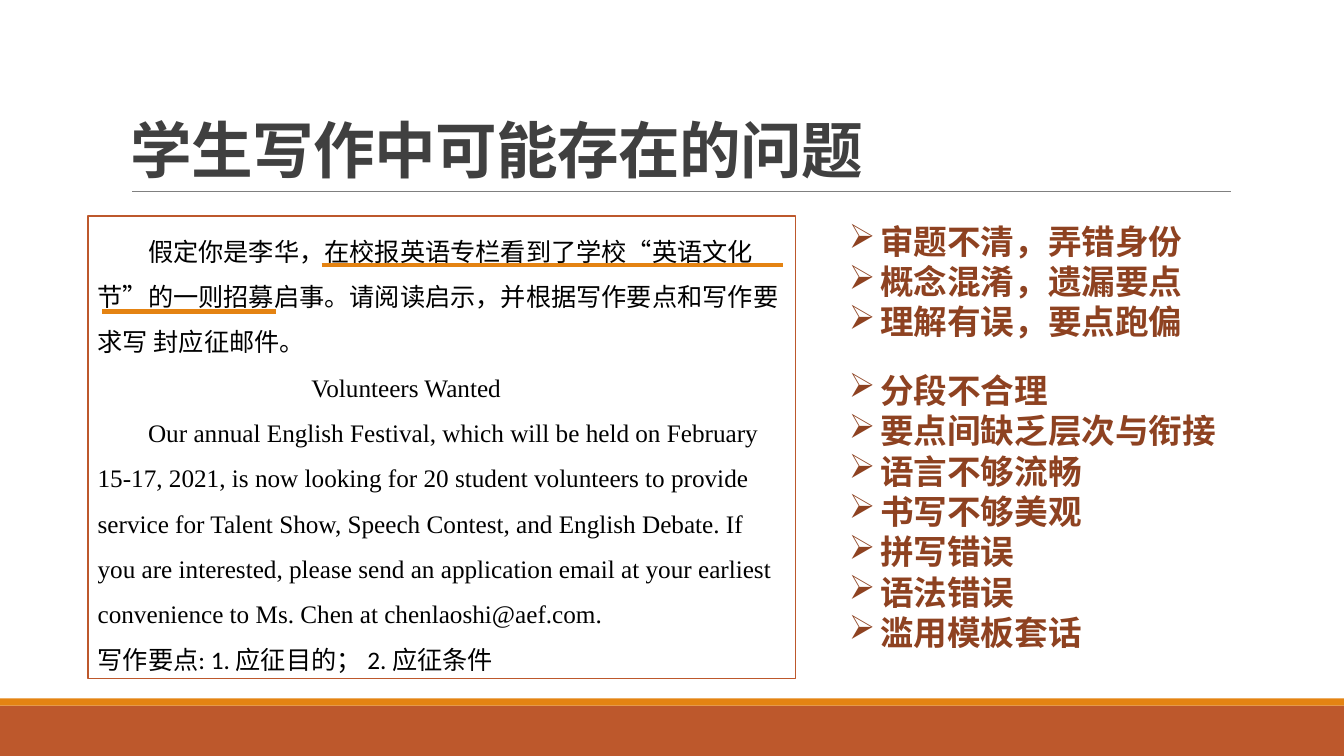
from dataclasses import dataclass

from lxml.etree import SubElement
from pptx import Presentation
from pptx.dml.color import RGBColor
from pptx.enum.shapes import MSO_CONNECTOR, MSO_SHAPE
from pptx.enum.text import MSO_ANCHOR, PP_ALIGN
from pptx.oxml.ns import qn
from pptx.util import Inches, Pt


@dataclass(frozen=True)
class Theme:
    rust: str = "BD582C"
    orange: str = "E48312"
    brown: str = "8E4221"
    title: str = "404040"
    body: str = "000000"
    rule: str = "808080"
    sans: str = "Calibri"
    serif: str = "Times New Roman"
    title_size: int = 44
    list_size: int = 24
    body_size: int = 18


THEME = Theme()
PROBLEMS_IN_CONTENT = ["审题不清，弄错身份", "概念混淆，遗漏要点", "理解有误，要点跑偏"]
PROBLEMS_IN_FORM = ["分段不合理", "要点间缺乏层次与衔接", "语言不够流畅", "书写不够美观",
                    "拼写错误", "语法错误", "滥用模板套话"]
TASK = ("假定你是李华，在校报英语专栏看到了学校“英语文化节”的一则招募启事。"
        "请阅读启示，并根据写作要点和写作要求写 封应征邮件。")
NOTICE_TITLE = "Volunteers Wanted"
NOTICE = ("Our annual English Festival, which will be held on February 15-17, 2021, "
          "is now looking for 20 student volunteers to provide service for Talent Show, "
          "Speech Contest, and English Debate. If you are interested, please send an "
          "application email at your earliest convenience to Ms. Chen at chenlaoshi@aef.com.")
KEY_POINTS = "写作要点: 1. 应征目的； 2. 应征条件"


def add_run(p, text, size, color, font=THEME.sans, bold=False):
    r = p.add_run()
    r.text = text
    r.font.size = Pt(size)
    r.font.name = font
    r.font.bold = bold
    r.font.color.rgb = RGBColor.from_string(color)
    return r


def set_indent(p, first, left=0):
    pPr = p._p.get_or_add_pPr()
    pPr.set("marL", str(Inches(left)))
    pPr.set("indent", str(Inches(first)))
    return pPr


def add_line(s, x1, y1, x2, y2, color, width):
    line = s.shapes.add_connector(MSO_CONNECTOR.STRAIGHT, Inches(x1), Inches(y1),
                                  Inches(x2), Inches(y2))
    line.line.color.rgb = RGBColor.from_string(color)
    line.line.width = Pt(width)
    SubElement(line._element.spPr, qn("a:effectLst"))


def add_rect(s, x, y, w, h):
    sp = s.shapes.add_shape(MSO_SHAPE.RECTANGLE, Inches(x), Inches(y), Inches(w), Inches(h))
    sp.shadow.inherit = False
    return sp


def add_text_box(s, x, y, w, h):
    tf = s.shapes.add_textbox(Inches(x), Inches(y), Inches(w), Inches(h)).text_frame
    tf.word_wrap = True
    return tf


def add_footer_bands(s, x, y, w, h):
    """Thin orange strip on top of a rust band."""
    strip = 0.07
    for top, height, color in ((y + strip, h - strip, THEME.rust), (y, strip, THEME.orange)):
        band = add_rect(s, x, top, w, height)
        band.fill.solid()
        band.fill.fore_color.rgb = RGBColor.from_string(color)
        band.line.fill.background()


def add_title(s, x, y, w, h):
    add_line(s, x + 0.11, y + h, x + w + 0.01, y + h, THEME.rule, 0.5)
    tf = add_text_box(s, x, y, w, h)
    tf.vertical_anchor = MSO_ANCHOR.BOTTOM
    p = tf.paragraphs[0]
    p.line_spacing = 0.85
    r = add_run(p, "学生写作中可能存在的问题", THEME.title_size, THEME.title, bold=True)
    r.font._element.set("spc", "-50")


def add_problem_list(s, x, y, w, h, problems):
    tf = add_text_box(s, x, y, w, h)
    for i, problem in enumerate(problems):
        p = tf.add_paragraph() if i else tf.paragraphs[0]
        SubElement(set_indent(p, -0.31, 0.31), qn("a:buChar")).set("char", "➢")
        add_run(p, problem, THEME.list_size, THEME.brown, bold=True)


def add_writing_task(s, x, y, w, h):
    """Framed task text with the key phrase underlined in orange."""
    frame = add_rect(s, x, y, w, h)
    frame.fill.background()
    frame.line.color.rgb = RGBColor.from_string(THEME.rust)
    frame.line.width = Pt(1.25)
    tf = frame.text_frame
    tf.word_wrap = True
    tf.vertical_anchor = MSO_ANCHOR.TOP
    paragraphs = ((TASK, THEME.sans, 0.5), (NOTICE_TITLE, THEME.serif, 2.12),
                  (NOTICE, THEME.serif, 0.5))
    for i, (text, font, indent) in enumerate(paragraphs):
        p = tf.add_paragraph() if i else tf.paragraphs[0]
        p.alignment = PP_ALIGN.LEFT
        p.line_spacing = 1.5
        set_indent(p, indent)
        add_run(p, text, THEME.body_size, THEME.body, font)
    p.add_line_break()
    add_run(p, KEY_POINTS, THEME.body_size, THEME.body)
    for start, end, drop in ((2.32, 6.9, 0.49), (0.14, 1.87, 0.95)):
        add_line(s, x + start, y + drop, x + end, y + drop, THEME.orange, 3)


def main():
    prs = Presentation()
    prs.slide_width, prs.slide_height = Inches(13.33), Inches(7.5)
    s = prs.slides.add_slide(prs.slide_layouts[6])
    add_footer_bands(s, 0, 6.93, 13.33, 0.57)
    add_title(s, 1.2, 0.31, 11, 1.59)
    add_problem_list(s, 8.32, 2.14, 4.28, 1.31, PROBLEMS_IN_CONTENT)
    add_writing_task(s, 0.87, 2.14, 7.02, 4.59)
    add_problem_list(s, 8.32, 3.62, 4.14, 2.94, PROBLEMS_IN_FORM)
    prs.save("out.pptx")


if __name__ == "__main__":
    main()
